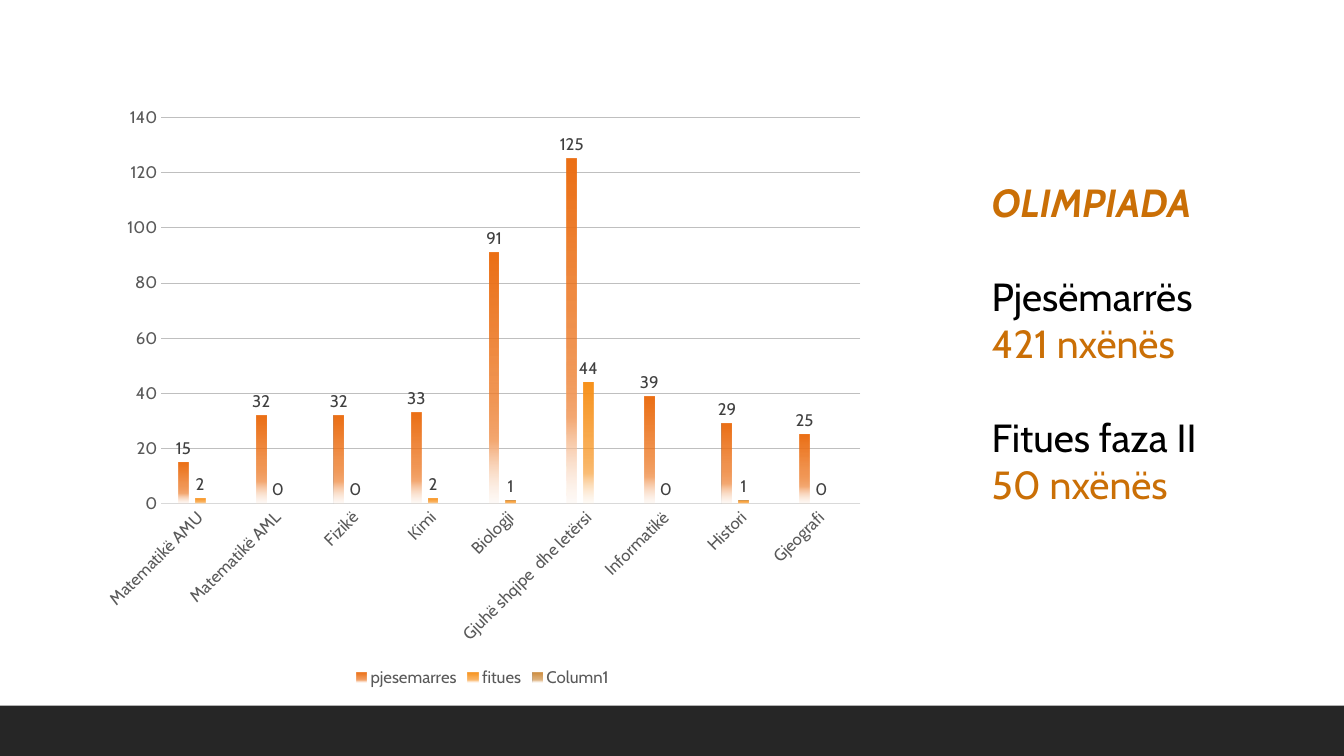
from dataclasses import dataclass

from lxml import etree
from pptx import Presentation
from pptx.chart.data import CategoryChartData
from pptx.dml.color import RGBColor
from pptx.enum.chart import XL_CHART_TYPE, XL_LABEL_POSITION, XL_LEGEND_POSITION, XL_TICK_MARK
from pptx.enum.shapes import MSO_SHAPE
from pptx.oxml import parse_xml
from pptx.oxml.ns import nsdecls
from pptx.util import Pt

COLUMNS = XL_CHART_TYPE.COLUMN_CLUSTERED
OUTSIDE_END = XL_LABEL_POSITION.OUTSIDE_END
BOTTOM = XL_LEGEND_POSITION.BOTTOM
NO_TICK = XL_TICK_MARK.NONE
RECTANGLE = MSO_SHAPE.RECTANGLE


@dataclass(frozen=True)
class Theme:
    font: str = "Cabin"
    chart_size: int = 12
    text_size: int = 28
    band: str = "262626"
    text: str = "000000"
    accent: str = "CA6F06"
    axis_text: str = "595959"
    label_text: str = "404040"
    axis_line: str = "D9D9D9"
    grid: str = "BFBFBF"


THEME = Theme()
PAGE_WIDTH, PAGE_HEIGHT, BAND_HEIGHT = 960, 540, 36

SUBJECTS = ["Matematikë AMU", "Matematikë AML", "Fizikë", "Kimi", "Biologji",
            "Gjuhë shqipe  dhe letërsi", "Informatikë", "Histori", "Gjeografi"]
# Name, values, and the strong, middle and pale colours of the column gradient
SERIES = [
    ("pjesemarres", [15, 32, 32, 33, 91, 125, 39, 29, 25], ("EC7016", "F4A973", "FBE2D0")),
    ("fitues", [2, 0, 0, 2, 1, 44, 0, 1, 0], ("F8931D", "FBBE77", "FEE9D2")),
    ("Column1", [None] * len(SUBJECTS), ("CE8D3E", "E2BB8B", "F5E8D8")),
]
RESULTS = [("Pjesëmarrës ", "421 nxënës"), ("Fitues faza II ", "50 nxënës")]


def style_font(font, size, color):
    font.name = THEME.font
    font.size = Pt(size)
    font.color.rgb = RGBColor.from_string(color)


def fade_columns(series, strong, middle, pale):
    """Fill the columns with a gradient that fades out towards the base."""
    stops = [(0, strong, 100), (51, strong, 75), (75, middle, 100), (100, pale, 15)]
    stop_xml = "".join(
        f'<a:gs pos="{place * 1000}"><a:srgbClr val="{color}">'
        f'<a:alpha val="{opacity * 1000}"/></a:srgbClr></a:gs>'
        for place, color, opacity in stops)
    gradient = parse_xml(
        f'<a:gradFill {nsdecls("a")} rotWithShape="1"><a:gsLst>{stop_xml}</a:gsLst>'
        '<a:lin ang="5400000" scaled="0"/></a:gradFill>')
    series.format.fill.background()
    properties = series.format.fill._xPr
    properties.replace(properties[0], gradient)


def style_axes(chart):
    for axis in (chart.category_axis, chart.value_axis):
        axis.major_tick_mark = axis.minor_tick_mark = NO_TICK
        style_font(axis.tick_labels.font, THEME.chart_size, THEME.axis_text)

    subjects, counts = chart.category_axis, chart.value_axis
    subjects.format.line.color.rgb = RGBColor.from_string(THEME.axis_line)
    subjects.format.line.width = Pt(0.75)
    slanted = subjects._element.txPr.bodyPr
    slanted.set("rot", "-2700000")
    slanted.set("vert", "horz")

    counts.minimum_scale, counts.maximum_scale, counts.major_unit = 0, 140, 20
    counts.format.line.fill.background()
    counts.has_major_gridlines = True
    grid = counts.major_gridlines.format.line
    grid.color.rgb = RGBColor.from_string(THEME.grid)
    grid.width = Pt(0.75)


def add_subject_chart(page, left, top, width, height):
    data = CategoryChartData()
    data.categories = SUBJECTS
    for name, values, _ in SERIES:
        data.add_series(name, values)
    chart = page.shapes.add_chart(
        COLUMNS, Pt(left), Pt(top), Pt(width), Pt(height), data).chart
    chart.has_title = False
    style_font(chart.font, THEME.chart_size, THEME.axis_text)
    style_axes(chart)

    chart.has_legend = True
    chart.legend.position = BOTTOM
    chart.legend.include_in_layout = False
    style_font(chart.legend.font, THEME.chart_size, THEME.axis_text)

    plot = chart.plots[0]
    plot.vary_by_categories = False
    plot.gap_width, plot.overlap = 355, -70
    for series, (_, _, colors) in zip(plot.series, SERIES):
        fade_columns(series, *colors)
        series.invert_if_negative = False
        labels = series.data_labels
        labels.show_value = True
        labels.position = OUTSIDE_END
        style_font(labels.font, THEME.chart_size, THEME.label_text)


def add_summary(page, left, top, width, height):
    frame = page.shapes.add_textbox(Pt(left), Pt(top), Pt(width), Pt(height)).text_frame
    frame.word_wrap = True
    heading = frame.paragraphs[0]
    heading.text = "OLIMPIADA"
    style_font(heading.font, THEME.text_size, THEME.accent)
    heading.font.bold = heading.font.italic = True

    for caption, amount in RESULTS:
        para = frame.add_paragraph()
        para.space_before = Pt(33.6)
        for words, color in ((caption, THEME.text), (amount, THEME.accent)):
            span = para.add_run()
            span.text = words
            style_font(span.font, THEME.text_size, color)


def add_footer_band(page, left, top, width, height):
    band = page.shapes.add_shape(RECTANGLE, Pt(left), Pt(top), Pt(width), Pt(height))
    band.shadow.inherit = False
    band.fill.solid()
    band.fill.fore_color.rgb = RGBColor.from_string(THEME.band)
    band.line.fill.background()


def main():
    deck = Presentation()
    deck.slide_width, deck.slide_height = Pt(PAGE_WIDTH), Pt(PAGE_HEIGHT)
    page = deck.slides.add_slide(deck.slide_layouts[6])
    add_footer_band(page, 0, PAGE_HEIGHT - BAND_HEIGHT, PAGE_WIDTH, BAND_HEIGHT)
    add_subject_chart(page, 64, 68.4, 561.6, 425.5)
    add_summary(page, 701.3, 123.8, 166.3, 244.8)
    deck.save("out.pptx")


if __name__ == "__main__":
    main()
